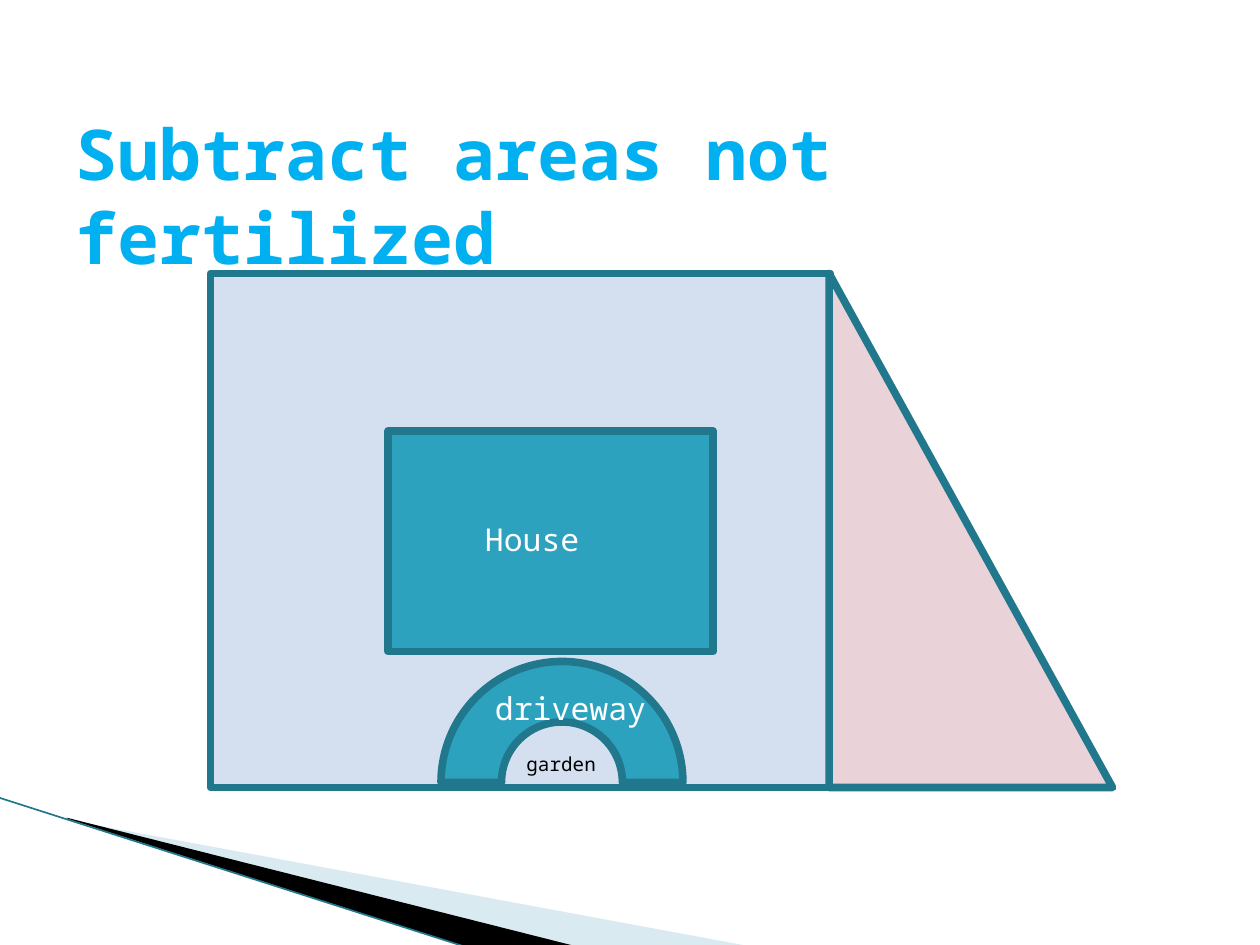
from lxml import etree
from pptx import Presentation
from pptx.dml.color import RGBColor
from pptx.enum.shapes import MSO_CONNECTOR as Connector, MSO_SHAPE as Shape
from pptx.enum.text import MSO_AUTO_SIZE as AutoSize
from pptx.oxml.ns import qn
from pptx.util import Inches, Pt

THEME = {
    "font": "Noto Sans Mono",
    "title": "00B0F0", "light": "FFFFFF", "dark": "000000",
    "lawn": "D4DFEF", "side": "EAD3D8", "built": "2DA2BF", "outline": "21788D",
    "wedge": "A0CBDC",
    "title_size": 40, "label_size": 18, "small_size": 11,
    "outline_width": 4.33, "edge_width": 0.95,
}

WEDGES = [
    ([(0.55, 6.51), (5.95, 7.51), (4.56, 7.51), (0.55, 6.5)], "wedge", 40),
    ([(0.53, 6.49), (4.57, 7.51), (3.72, 7.52), (0.54, 6.5)], "dark", 100),
]
EDGE = (-0.01, 6.33, 3.71, 7.52)
AREAS = [
    (Shape.RECTANGLE, (1.67, 2.17, 4.92, 4.08), "lawn"),
    (Shape.RECTANGLE, (3.08, 3.42, 2.58, 1.75), "built"),
    (Shape.BLOCK_ARC, (3.5, 5.25, 1.92, 1.92), "built"),
    (Shape.RIGHT_TRIANGLE, (6.58, 2.17, 2.25, 4.08), "side"),
]
TEXTS = [
    ("Subtract areas not fertilized", (0.5, 0.83, 8.67, 0.77),
     {"size": "title_size", "color": "title", "bold": True}),
    ("garden", (4.08, 5.92, 1, 0.29), {"size": "small_size", "color": "dark"}),
    ("House", (3.75, 4.08, 1.33, 0.4), {}),
    ("driveway", (3.83, 5.42, 1.5, 0.4), {}),
]


def color_of(name):
    return RGBColor.from_string(THEME[name])


def paint(shape, fill):
    shape.shadow.inherit = False
    shape.fill.solid()
    shape.fill.fore_color.rgb = color_of(fill)


def draw_line(line, width):
    line.color.rgb = color_of("outline")
    line.width = Pt(THEME[width])


def add_wedge(slide, points, fill, opacity):
    corners = [(Inches(x), Inches(y)) for x, y in points]
    builder = slide.shapes.build_freeform(*corners[0])
    builder.add_line_segments(corners[1:], close=True)
    wedge = builder.convert_to_shape()
    paint(wedge, fill)
    wedge.line.fill.background()
    if opacity < 100:
        color = wedge.fill._xPr.find(".//" + qn("a:srgbClr"))
        etree.SubElement(color, qn("a:alpha"), val=str(opacity * 1000))


def add_edge(slide):
    edge = slide.shapes.add_connector(Connector.STRAIGHT, *map(Inches, EDGE))
    draw_line(edge.line, "edge_width")
    etree.SubElement(edge._element.spPr, qn("a:effectLst"))


def add_area(slide, kind, box, fill):
    area = slide.shapes.add_shape(kind, *map(Inches, box))
    paint(area, fill)
    draw_line(area.line, "outline_width")


def add_text(slide, text, box, size="label_size", color="light", bold=False):
    frame = slide.shapes.add_textbox(*map(Inches, box)).text_frame
    frame.word_wrap = True
    frame.auto_size = AutoSize.SHAPE_TO_FIT_TEXT
    run = frame.paragraphs[0].add_run()
    run.text = text
    run.font.name = THEME["font"]
    run.font.size = Pt(THEME[size])
    run.font.bold = bold
    run.font.color.rgb = color_of(color)


def main():
    presentation = Presentation()
    presentation.slide_width, presentation.slide_height = Inches(10), Inches(7.5)
    slide = presentation.slides.add_slide(presentation.slide_layouts[6])
    for wedge in WEDGES:
        add_wedge(slide, *wedge)
    add_edge(slide)
    for area in AREAS:
        add_area(slide, *area)
    for text, box, style in TEXTS:
        add_text(slide, text, box, **style)
    presentation.save("out.pptx")


if __name__ == "__main__":
    main()
